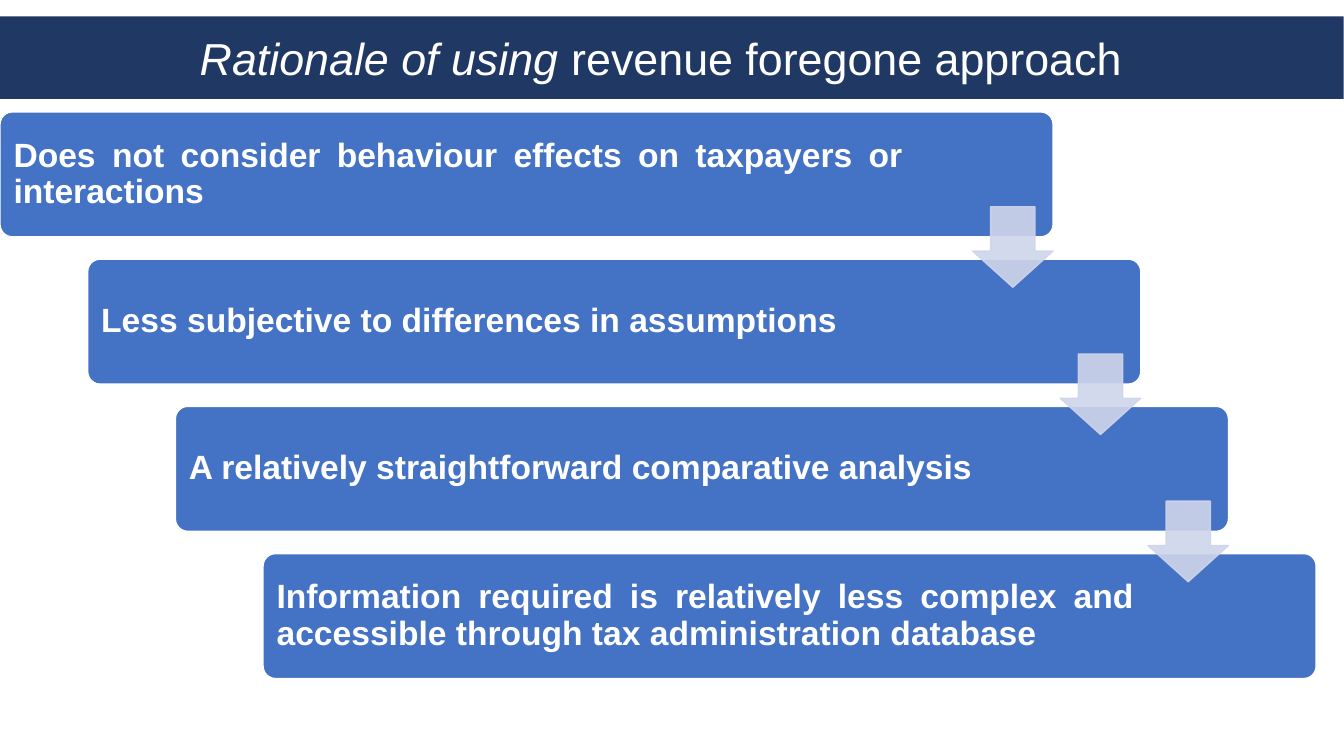
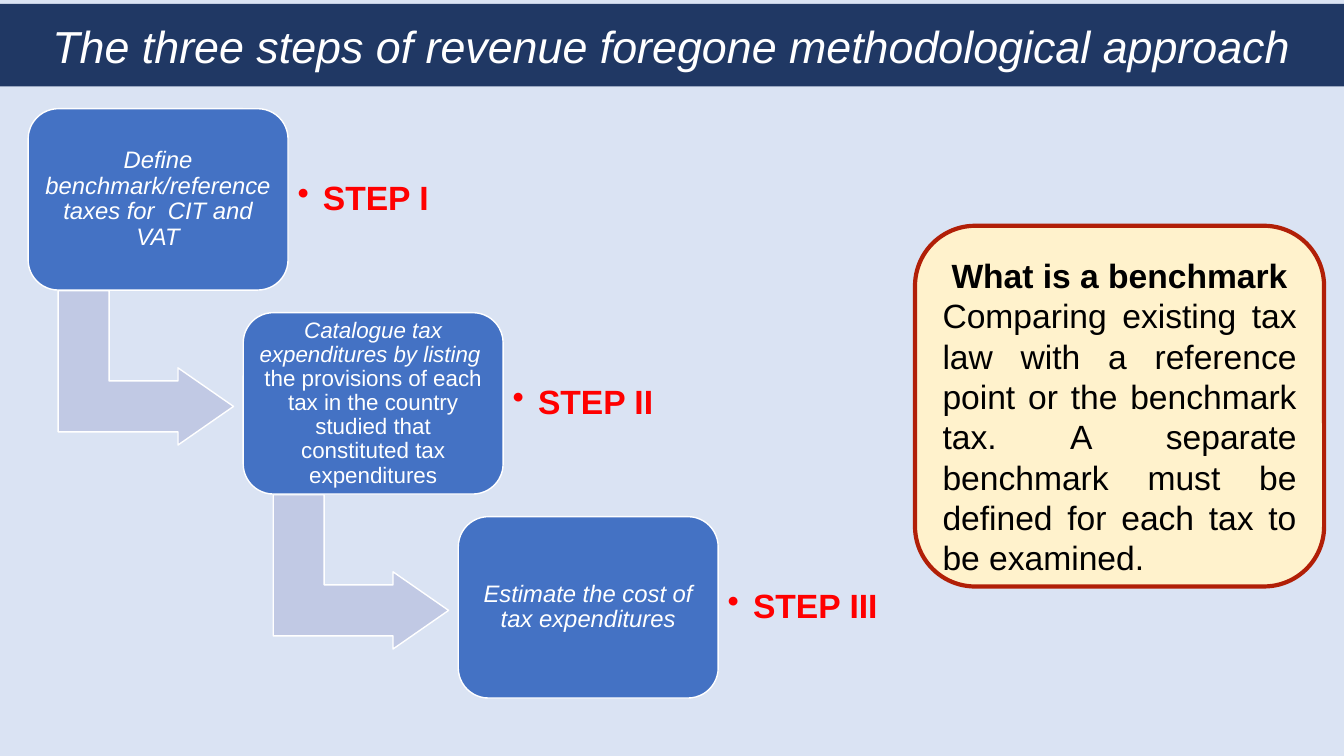
from lxml import etree
from pptx import Presentation
from pptx import util as u
from pptx.dml.color import RGBColor
from pptx.enum import shapes, text
from pptx.oxml.ns import qn

Cm = u.Cm
NAVY, BLUE, WHITE, BLACK, RED = "203864", "4472C4", "FFFFFF", "000000", "FF0000"
PALE, MIST, LILAC, CREAM, BRICK = "DAE3F3", "CFD5EA", "C1C9E4", "FFF2CC", "B11F07"
ROUND = shapes.MSO_SHAPE.ROUNDED_RECTANGLE
DOWN = shapes.MSO_SHAPE.DOWN_ARROW
BENT = shapes.MSO_SHAPE.BENT_UP_ARROW
LEFT, MID, JUST = text.PP_ALIGN.LEFT, text.PP_ALIGN.CENTER, text.PP_ALIGN.JUSTIFY


def rgb(code):
    """Turn a hex string into a colour."""
    return RGBColor.from_string(code)


class Deck:
    """Hold the shared style and the current slide."""

    font = "Arial"

    def __init__(self):
        """Open a wide, empty deck."""
        self.prs = Presentation()
        self.prs.slide_width, self.prs.slide_height = Cm(33.87), Cm(19.05)

    def page(self, back, spot, runs):
        """Add a slide whose title is a rounded band."""
        self.slide = self.prs.slides.add_slide(self.prs.slide_layouts[5])
        self.slide.background.fill.solid()
        self.slide.background.fill.fore_color.rgb = rgb(back)
        band = self.slide.shapes.title
        band.left, band.top, band.width, band.height = map(Cm, spot)
        geom = etree.SubElement(band.element.spPr, qn("a:prstGeom"), prst="roundRect")
        etree.SubElement(geom, qn("a:avLst"))
        band.fill.solid()
        band.fill.fore_color.rgb = rgb(NAVY)
        self.frame(band)
        self.para(band, runs, 32, WHITE)

    def shape(self, kind, spot, fill, line=WHITE, width=1, adj=(), alpha=None):
        """Add a filled and outlined preset shape."""
        item = self.slide.shapes.add_shape(kind, *map(Cm, spot))
        item.shadow.inherit = False
        for i, part in enumerate(adj):
            item.adjustments[i] = part
        item.fill.solid()
        item.fill.fore_color.rgb = rgb(fill)
        item.line.color.rgb = rgb(line)
        item.line.width = u.Pt(width)
        if alpha:
            for tint in item.element.spPr.iter(qn("a:srgbClr")):
                etree.SubElement(tint, qn("a:alpha"), val=str(alpha * 1000))
        return item

    def frame(self, item, pad=0.25, right=None):
        """Set wrapping, middle anchor and margins."""
        tf = item.text_frame
        tf.word_wrap = True
        tf.auto_size = text.MSO_AUTO_SIZE.NONE
        tf.vertical_anchor = text.MSO_ANCHOR.MIDDLE
        tf.margin_left = tf.margin_top = tf.margin_bottom = Cm(pad)
        tf.margin_right = Cm(pad if right is None else right)

    def para(self, item, runs, size, color, align=MID, space=1.0, dot=False):
        """Add a paragraph from (words, style) runs; style holds b or i."""
        tf = item.text_frame
        par = tf.paragraphs[0] if not tf.text else tf.add_paragraph()
        if dot:
            props = par._p.get_or_add_pPr()
            props.set("marL", str(Cm(0.64)))
            props.set("indent", str(-Cm(0.64)))
            etree.SubElement(props, qn("a:buChar"), char="•")
        par.alignment, par.line_spacing = align, space
        for words, style in runs:
            run = par.add_run()
            run.text = words
            face = run.font
            face.name, face.size, face.color.rgb = self.font, u.Pt(size), rgb(color)
            face.bold, face.italic = "b" in style, "i" in style

    def label(self, spot, words):
        """Add a red bulleted step label."""
        box = self.slide.shapes.add_textbox(*map(Cm, spot))
        self.frame(box)
        self.para(box, [(words, "b")], 24, RED, LEFT, 0.9, True)


def reasons(deck):
    """Build the staircase of reasons."""
    deck.page(WHITE, (-0.23, 0.41, 34.09, 2.08),
              [("Rationale of using ", "i"), ("revenue foregone approach ", "")])
    rows = [
        ("Does not consider behaviour effects on taxpayers or interactions ", 3.7),
        ("Less subjective to differences in assumptions ", 4.5),
        ("A relatively straightforward comparative analysis ", 4.5),
        ("Information required is relatively less complex and "
         "accessible through tax administration database", 4.5),
    ]
    spots = [(2.21 * i, 2.82 + 3.71 * i) for i in range(len(rows))]
    for (x, y), (words, right) in zip(spots, rows):
        bar = deck.shape(ROUND, (x, y, 26.54, 3.15), BLUE, adj=[0.1])
        deck.frame(bar, right=right)
        deck.para(bar, [(words, "b")], 24, WHITE, JUST, 0.9)
    for x, y in spots[:-1]:
        deck.shape(DOWN, (x + 24.51, y + 2.39, 2.03, 2.03), MIST, MIST,
                   adj=[0.55, 0.45], alpha=90)


def steps(deck):
    """Build the three steps and the benchmark note."""
    deck.page(PALE, (0, 0.1, 33.87, 2.08),
              [("The three steps of revenue foregone methodological approach", "i")])
    rows = [
        ("STEP I", 17, [("Define benchmark/reference taxes for  CIT and VAT", "i")]),
        ("STEP II", 16, [
            ("Catalogue tax expenditures by listing ", "i"),
            (" the provisions of each tax in the country studied "
             "that constituted tax expenditures", "")]),
        ("STEP III", 17, [("Estimate the cost of tax expenditures", "i")]),
    ]
    for i, (name, size, runs) in enumerate(rows):
        x, y = 0.71 + 5.42 * i, 2.74 + 5.14 * i
        if i < len(rows) - 1:
            bend = deck.shape(BENT, (x + 1.02, y + 4.32, 3.89, 4.42), LILAC,
                              adj=[0.33, 0.25, 0.36])
            bend.rotation = 90
        card = deck.shape(ROUND, (x, y, 6.55, 4.57), BLUE)
        deck.frame(card, 0.18)
        deck.para(card, runs, size, WHITE, space=0.9)
        deck.label((x + 6.54, y + 0.43, 4.75, 3.71), name)
    note = deck.shape(ROUND, (23.06, 5.69, 10.31, 9.09), CREAM, BRICK, 3)
    deck.frame(note)
    deck.para(note, [("What is a benchmark", "b")], 24, BLACK, space=1.5)
    deck.para(note, [("Comparing existing tax law with a reference point or the "
                      "benchmark tax. A separate benchmark must be defined for "
                      "each tax to be examined.", "")], 24, BLACK, JUST)


def main():
    """Build and save the deck."""
    deck = Deck()
    reasons(deck)
    steps(deck)
    deck.prs.save("out.pptx")


if __name__ == "__main__":
    main()
